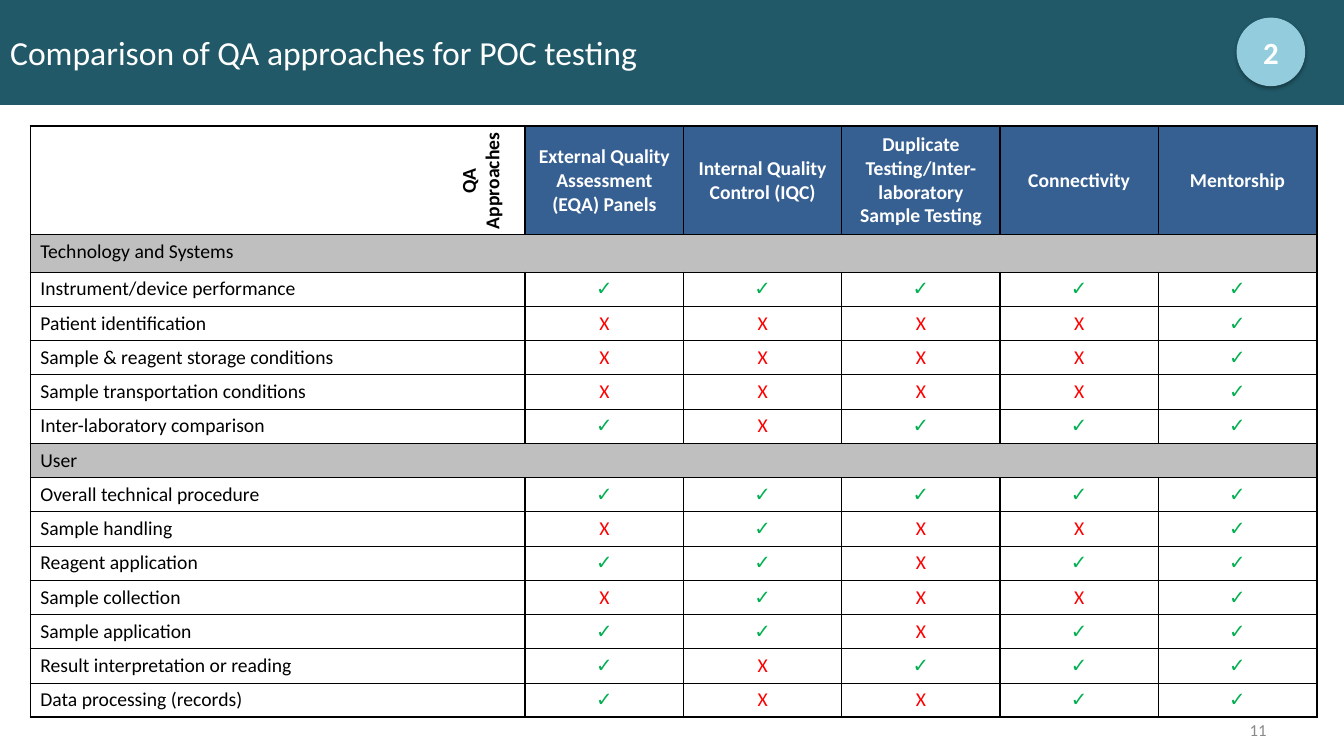
from lxml.etree import SubElement
from pptx import Presentation
from pptx.dml.color import RGBColor
from pptx.enum.shapes import MSO_SHAPE as SHAPE
from pptx.enum.text import MSO_ANCHOR as ANCHOR, PP_ALIGN as ALIGN
from pptx.oxml.ns import qn
from pptx.util import Inches, Pt


def color(hex_string):
    return RGBColor.from_string(hex_string)


def write(frame, text, size, hex_color, align=ALIGN.LEFT, bold=False, anchor=ANCHOR.TOP):
    """Fill a text frame, one paragraph per line of text."""
    frame.word_wrap = True
    frame.vertical_anchor = anchor
    for index, line in enumerate(text.split("\n")):
        paragraph = frame.add_paragraph() if index else frame.paragraphs[0]
        paragraph.alignment = align
        run = paragraph.add_run()
        run.text = line
        run.font.name = "Calibri"
        run.font.size = Pt(size)
        run.font.bold = bold
        run.font.color.rgb = color(hex_color)


APPROACHES = [
    "External Quality Assessment (EQA) Panels",
    "Internal Quality Control (IQC)",
    "Duplicate Testing/Inter-laboratory Sample Testing",
    "Connectivity",
    "Mentorship",
]
# A row without marks is a section heading
CRITERIA = [
    ("Technology and Systems", ""),
    ("Instrument/device performance", "✓✓✓✓✓"),
    ("Patient identification", "XXXX✓"),
    ("Sample & reagent storage conditions", "XXXX✓"),
    ("Sample transportation conditions", "XXXX✓"),
    ("Inter-laboratory comparison", "✓X✓✓✓"),
    ("User", ""),
    ("Overall technical procedure", "✓✓✓✓✓"),
    ("Sample handling", "X✓XX✓"),
    ("Reagent application", "✓✓X✓✓"),
    ("Sample collection", "X✓XX✓"),
    ("Sample application", "✓✓X✓✓"),
    ("Result interpretation or reading", "✓X✓✓✓"),
    ("Data processing (records)", "✓XX✓✓"),
]
MARK_COLORS = {"✓": "00B050", "X": "FF0000"}

prs = Presentation()
prs.slide_width, prs.slide_height = Inches(13.33), Inches(7.5)
slide = prs.slides.add_slide(prs.slide_layouts[5])

# Title band
title = slide.shapes.title
title.left, title.top = 0, 0
title.width, title.height = prs.slide_width, Inches(1.04)
title.fill.solid()
title.fill.fore_color.rgb = color("215968")
write(title.text_frame, "Comparison of QA approaches for POC testing", 24, "FFFFFF",
      anchor=ANCHOR.MIDDLE)

# Page number
page_number = slide.shapes.add_textbox(Inches(9.55), Inches(6.98), Inches(3.11), Inches(0.52))
write(page_number.text_frame, "11", 12, "898989", ALIGN.RIGHT, anchor=ANCHOR.MIDDLE)

# Section badge with a soft shadow
badge = slide.shapes.add_shape(SHAPE.OVAL, Inches(12.27), Inches(0.18), Inches(0.67), Inches(0.67))
badge.fill.solid()
badge.fill.fore_color.rgb = color("93CDDD")
badge.line.color.rgb = color("93CDDD")
badge.line.width = Pt(0.75)
badge.shadow.inherit = False
effects = badge._element.spPr.find(qn("a:effectLst"))
shadow = SubElement(effects, qn("a:outerShdw"), blurRad=str(Pt(3.1)), dist=str(Pt(1.8)),
                    dir="5400000", rotWithShape="0")
shadow_color = SubElement(shadow, qn("a:srgbClr"), val="000000")
SubElement(shadow_color, qn("a:alpha"), val="35000")
write(badge.text_frame, "2", 22, "FFFFFF", ALIGN.CENTER, True, ANCHOR.MIDDLE)

# Comparison table
row_count, column_count = len(CRITERIA) + 1, len(APPROACHES) + 1
last_row, last_column = row_count - 1, column_count - 1
comparison = slide.shapes.add_table(row_count, column_count, Inches(0.3), Inches(1.25),
                                    Inches(12.78), Inches(5.83)).table
for index, column in enumerate(comparison.columns):
    column.width = Inches(1.57 if index else 4.91)
for index, row in enumerate(comparison.rows):
    row.height = Inches({0: 1.08, 1: 0.37}.get(index, 0.34))

for r in range(row_count):
    is_section = r > 0 and not CRITERIA[r - 1][1]
    for c in range(column_count):
        cell = comparison.cell(r, c)
        cell_properties = cell._tc.get_or_add_tcPr()
        thick_sides = {"a:lnL": c == 1, "a:lnR": c in (0, last_column),
                       "a:lnT": r == 0, "a:lnB": r == last_row}
        for side, thick in thick_sides.items():
            border = SubElement(cell_properties, qn(side), w=str(Pt(1.5 if thick else 1)))
            border_fill = SubElement(border, qn("a:solidFill"))
            SubElement(border_fill, qn("a:srgbClr"), val="000000")
        if is_section or (r == 0 and c > 0):
            cell.fill.solid()
            cell.fill.fore_color.rgb = color("BFBFBF" if is_section else "376092")
        else:
            cell.fill.background()

for c, approach in enumerate(APPROACHES, 1):
    header = comparison.cell(0, c)
    write(header.text_frame, approach, 14, "FFFFFF", ALIGN.CENTER, True)
    header.vertical_anchor = ANCHOR.MIDDLE

for r, (criterion, marks) in enumerate(CRITERIA, 1):
    label = comparison.cell(r, 0)
    write(label.text_frame, criterion, 14, "000000")
    if not marks:
        label.merge(comparison.cell(r, last_column))
    for c, mark in enumerate(marks, 1):
        mark_cell = comparison.cell(r, c)
        write(mark_cell.text_frame, mark, 14, MARK_COLORS[mark], ALIGN.CENTER)
        mark_cell.vertical_anchor = ANCHOR.MIDDLE

# Sideways caption in the corner cell
caption = slide.shapes.add_textbox(Inches(3.33), Inches(1.65), Inches(2.58), Inches(0.29))
caption.rotation = 270
write(caption.text_frame, "QA\nApproaches", 14, "000000", ALIGN.CENTER, True)

prs.save("out.pptx")
